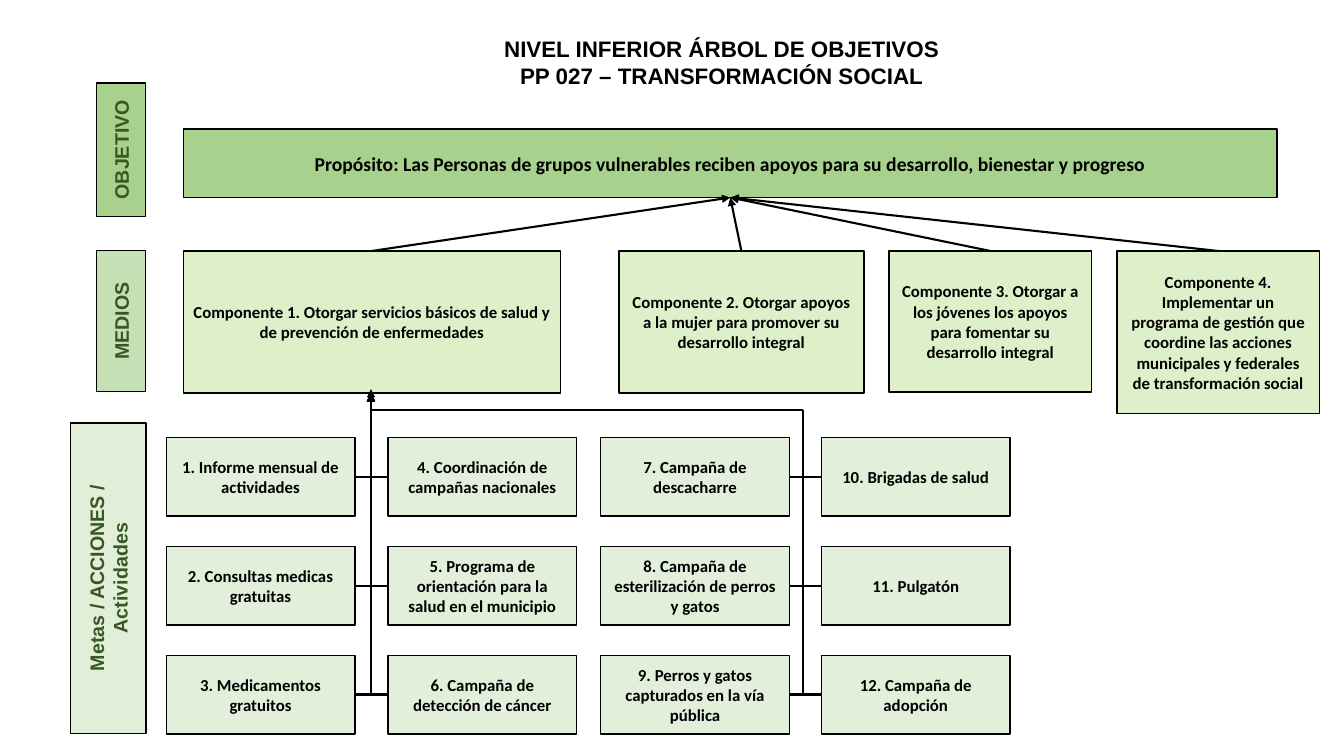
from dataclasses import dataclass

from lxml import etree
from pptx import Presentation
from pptx.dml.color import RGBColor
from pptx.enum.shapes import MSO_CONNECTOR, MSO_SHAPE
from pptx.enum.text import MSO_ANCHOR, MSO_AUTO_SIZE, PP_ALIGN
from pptx.oxml.ns import qn
from pptx.util import Inches, Pt

BOX = MSO_SHAPE.FLOWCHART_PROCESS
LINE, ELBOW = MSO_CONNECTOR.STRAIGHT, MSO_CONNECTOR.ELBOW
CENTER, MIDDLE = PP_ALIGN.CENTER, MSO_ANCHOR.MIDDLE
GROW = MSO_AUTO_SIZE.SHAPE_TO_FIT_TEXT
TOP, BOTTOM = 0, 2  # connection sites of a box
COLS, ROWS = 40, 30


@dataclass(frozen=True)
class Theme:
    ink: str = "000000"
    label: str = "385723"
    goal: str = "A9D18E"
    means: str = "C5E0B4"
    lime: str = "92D050"
    head: str = "Arial"
    body: str = "Calibri"
    title: int = 16
    large: int = 14
    small: int = 12
    edge: float = 1
    link: float = 1.5


def write(frame, text, font, size, color, bold=True, align=CENTER):
    """Fill a text frame, one paragraph for each line of text."""
    frame.word_wrap = True
    for i, line in enumerate(text.split("\n")):
        para = frame.add_paragraph() if i else frame.paragraphs[0]
        para.alignment = align
        run = para.add_run()
        run.text = line
        run.font.name, run.font.size, run.font.bold = font, Pt(size), bold
        run.font.color.rgb = RGBColor.from_string(color)


class Board:
    def __init__(self, deck, theme):
        self.theme = theme
        self.col = deck.slide_width / COLS
        self.row = deck.slide_height / ROWS
        self.slide = deck.slides.add_slide(deck.slide_layouts[6])
        self.shapes = self.slide.shapes

    def place(self, x, y):
        return round(x * self.col), round(y * self.row)

    def title(self, text, x, y, w, h):
        area = self.shapes.add_textbox(*self.place(x, y), *self.place(w, h))
        t = self.theme
        write(area.text_frame, text, font=t.head, size=t.title, color=t.ink)
        area.text_frame.auto_size = GROW

    def box(self, text, x, y, w, h, fill, alpha=100, **style):
        t = self.theme
        shape = self.shapes.add_shape(BOX, *self.place(x, y), *self.place(w, h))
        shape.shadow.inherit = False
        shape.fill.solid()
        shape.fill.fore_color.rgb = RGBColor.from_string(fill)
        if alpha < 100:
            solid = shape._element.spPr.find(qn("a:solidFill"))
            etree.SubElement(solid[0], qn("a:alpha"), val=str(alpha * 1000))
        shape.line.color.rgb = RGBColor.from_string(t.ink)
        shape.line.width = Pt(t.edge)
        shape.text_frame.vertical_anchor = MIDDLE
        look = {"font": t.body, "size": t.small, "color": t.ink} | style
        write(shape.text_frame, text, **look)
        return shape

    def label(self, text, x, y, w, h, fill, alpha=100):
        """A box that reads upward and covers the given upright area."""
        t = self.theme
        shape = self.box(text, x, y, w, h, fill, alpha, font=t.head,
                         size=t.large, color=t.label)
        wide, high = shape.width, shape.height
        shape.left += (wide - high) // 2
        shape.top += (high - wide) // 2
        shape.width, shape.height = high, wide
        shape.rotation = 270

    def wire(self, kind, start, end, arrow):
        link = self.shapes.add_connector(
            kind, *self.place(*start), *self.place(*end))
        link.line.color.rgb = RGBColor.from_string(self.theme.ink)
        link.line.width = Pt(self.theme.link)
        props = link._element.spPr
        if arrow:
            etree.SubElement(props.find(qn("a:ln")), qn("a:tailEnd"),
                             type="triangle")
        etree.SubElement(props, qn("a:effectLst"))
        return link

    def join(self, low, high):
        """A straight arrow from the top of one box to the base of another."""
        link = self.wire(LINE, (0, 0), (1, 1), True)
        link.begin_connect(low, TOP)
        link.end_connect(high, BOTTOM)

    def bend(self, start, end, arrow=True):
        """A link with one corner: across first, then up."""
        props = self.wire(ELBOW, start, end, arrow)._element.spPr
        props.find(qn("a:prstGeom")).set("prst", "bentConnector2")
        frame = props.find(qn("a:xfrm"))
        if frame.get("flipH") and frame.get("flipV"):
            del frame.attrib["flipH"], frame.attrib["flipV"]
            frame.set("rot", "10800000")


# Components: text, left, width, height
MEANS = [
    ("Componente 1. Otorgar servicios básicos de salud y de prevención de "
     "enfermedades", 5.46, 11.22, 5.64),
    ("Componente 2. Otorgar apoyos a la mujer para promover su desarrollo "
     "integral", 18.42, 7.29, 5.64),
    ("Componente 3. Otorgar a los jóvenes los apoyos para fomentar su "
     "desarrollo integral", 26.46, 6.03, 5.6),
    ("Componente 4. Implementar un programa de gestión que coordine las "
     "acciones municipales y federales de transformación social",
     33.24, 6.03, 6.44),
]

# Activities: left edge of each column and its texts
TASKS = [
    (4.95, ["1. Informe mensual de actividades",
            "2. Consultas medicas gratuitas",
            "3. Medicamentos gratuitos"]),
    (11.55, ["4. Coordinación de campañas nacionales",
             "5. Programa de orientación para la salud en el municipio",
             "6. Campaña de detección de cáncer"]),
    (17.88, ["7. Campaña de descacharre",
             "8. Campaña de esterilización de perros y gatos",
             "9. Perros y gatos capturados en la vía pública"]),
    (24.45, ["10. Brigadas de salud", "11. Pulgatón",
             "12. Campaña de adopción"]),
]
TASK_W, TASK_H, TASK_TOP, STEP = 5.61, 3.12, 17.36, 4.32

# Trunks: place of the upper end, arrow or not
TRUNKS = [((11.04, 15.6), True), ((23.9, 16.28), False)]


def main():
    deck = Presentation()
    deck.slide_width, deck.slide_height = Inches(13.33), Inches(7.5)
    theme = Theme()
    board = Board(deck, theme)

    # Title and level labels
    board.title("NIVEL INFERIOR ÁRBOL DE OBJETIVOS\n"
                "PP 027 – TRANSFORMACIÓN SOCIAL", 9.96, 1.2, 23.04, 2.56)
    board.label("OBJETIVO", 2.87, 3.3, 1.47, 5.28, theme.goal)
    board.label("MEDIOS", 2.87, 9.94, 1.47, 5.6, theme.means)
    board.label("Metas / ACCIONES / Actividades", 2.09, 16.78, 2.25, 12.32,
                theme.means, 50)

    # Purpose and the components that lead to it
    goal = board.box("Propósito: Las Personas de grupos vulnerables reciben "
                     "apoyos para su desarrollo, bienestar y progreso",
                     5.46, 5.12, 32.55, 2.72, theme.goal, size=theme.large)
    for text, x, w, h in MEANS:
        board.join(board.box(text, x, 9.96, w, h, theme.lime, 30), goal)

    # Activities, each tied to the trunk beside it
    for i, (x, texts) in enumerate(TASKS):
        trunk, arrow = TRUNKS[i // 2]
        side = x if i % 2 else x + TASK_W
        for j, text in enumerate(texts):
            y = TASK_TOP + j * STEP
            board.box(text, x, y, TASK_W, TASK_H, theme.means, 49)
            board.bend((side, y + TASK_H / 2), trunk, arrow)

    # Second trunk to the first component
    board.bend(TRUNKS[1][0], (11.04, 15.44))

    deck.save("out.pptx")


if __name__ == "__main__":
    main()
